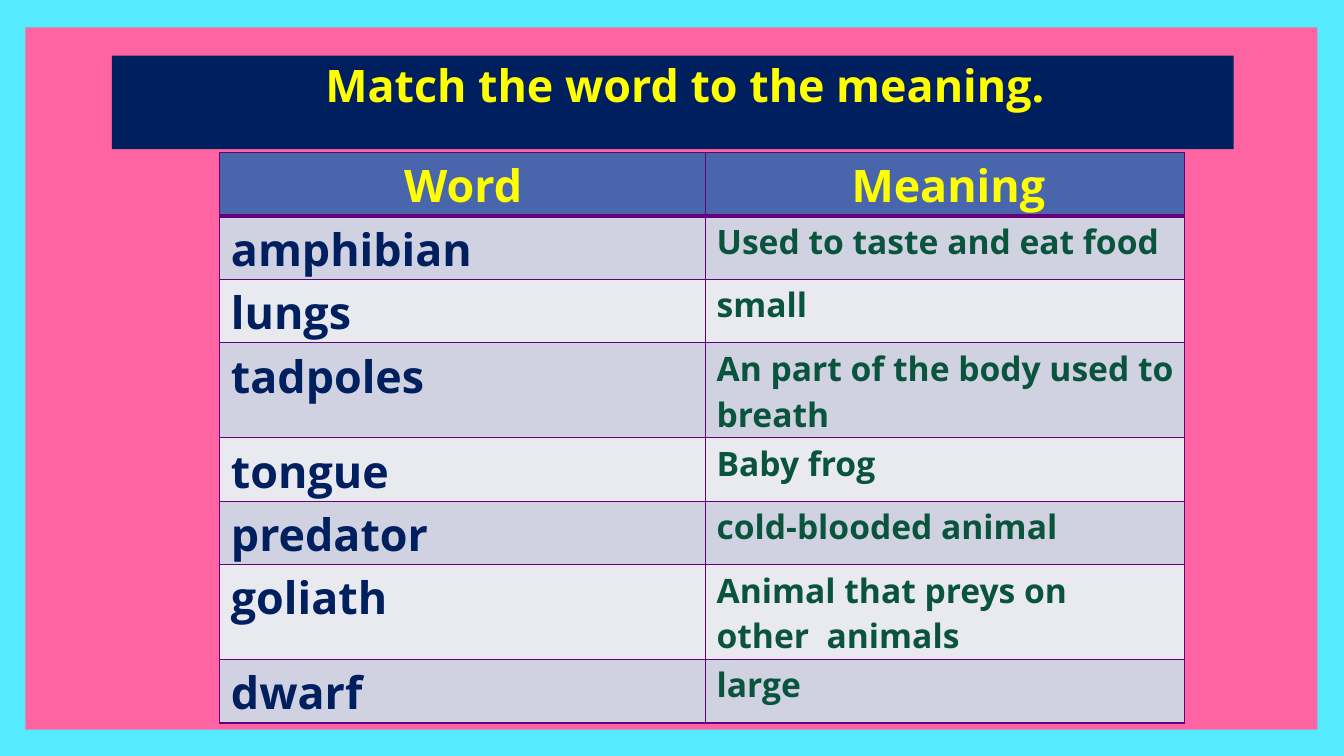
from dataclasses import dataclass

from lxml import etree
from pptx import Presentation
from pptx.dml.color import RGBColor
from pptx.enum.shapes import MSO_SHAPE
from pptx.enum.text import MSO_ANCHOR, PP_ALIGN
from pptx.oxml.ns import qn
from pptx.util import Cm, Pt

RECT = MSO_SHAPE.RECTANGLE
TOP = MSO_ANCHOR.TOP
LEFT, CENTER = PP_ALIGN.LEFT, PP_ALIGN.CENTER


@dataclass(frozen=True)
class Theme:
    font: str = "Open Sans"
    big: int = 32
    small: int = 24
    edge: str = "55EBFF"
    pink: str = "FF64A2"
    navy: str = "001F5F"
    yellow: str = "FFFF00"
    green: str = "0A543D"
    head: str = "4966AC"
    bands: tuple[str, str] = ("D0D2E2", "E9EAF0")
    line: str = "66007E"
    thin: int = 1
    thick: int = 3


@dataclass(frozen=True)
class Box:
    left: float
    top: float
    width: float
    height: float
    fill: str


@dataclass(frozen=True)
class Style:
    size: int
    color: str
    align: PP_ALIGN = LEFT
    left: float = 0.28
    right: float = 0
    top: float = 0.06


@dataclass(frozen=True)
class Pair:
    word: str
    meaning: str
    height: float = 1.6
    right: float = 0


THEME = Theme()
WIDTH, HEIGHT = 33.87, 19.05
FRAME = (
    Box(0, 0, WIDTH, HEIGHT, THEME.edge),
    Box(0.64, 0.69, 32.56, 17.7, THEME.pink),
)
TITLE = Box(2.82, 1.4, 28.27, 2.36, THEME.navy)
GRID_LEFT, GRID_TOP = 5.54, 3.84
COLS = (12.24, 12.07)
HEAD = Pair("Word", "Meaning")
PAIRS = (
    Pair("amphibian", "Used to taste and eat food"),
    Pair("lungs", "small"),
    Pair("tadpoles", "An part of the body used to\nbreath", 2.39),
    Pair("tongue", "Baby frog"),
    Pair("predator", "cold-blooded animal"),
    Pair("goliath", "Animal that preys on other  animals", 2.39, 1),
    Pair("dwarf", "large"),
)


def add_box(slide, box: Box):
    shape = slide.shapes.add_shape(
        RECT, Cm(box.left), Cm(box.top), Cm(box.width), Cm(box.height))
    shape.shadow.inherit = False
    shape.fill.solid()
    shape.fill.fore_color.rgb = RGBColor.from_string(box.fill)
    shape.line.fill.background()
    return shape


def set_text(frame, text: str, style: Style) -> None:
    frame.text = text
    for para in frame.paragraphs:
        para.alignment = style.align
        font = para.font
        font.name, font.size, font.bold = THEME.font, Pt(style.size), True
        font.color.rgb = RGBColor.from_string(style.color)
    frame.paragraphs[0].space_before = Pt(2)


def set_space(owner, style: Style) -> None:
    owner.margin_left, owner.margin_right = Cm(style.left), Cm(style.right)
    owner.margin_top, owner.margin_bottom = Cm(style.top), Cm(0)
    owner.vertical_anchor = TOP


def set_edges(cell, above: int, below: int) -> None:
    props = cell._tc.get_or_add_tcPr()
    sides = {"L": THEME.thin, "R": THEME.thin, "T": above, "B": below}
    for spot, (side, width) in enumerate(sides.items()):
        line = etree.Element(qn(f"a:ln{side}"), w=str(Pt(width)))
        fill = etree.SubElement(line, qn("a:solidFill"))
        etree.SubElement(fill, qn("a:srgbClr"), val=THEME.line)
        props.insert(spot, line)


def fill_cell(cell, text: str, style: Style, fill: str) -> None:
    set_text(cell.text_frame, text, style)
    set_space(cell, style)
    cell.fill.solid()
    cell.fill.fore_color.rgb = RGBColor.from_string(fill)


def add_grid(slide) -> None:
    rows = (HEAD, *PAIRS)
    table = slide.shapes.add_table(
        len(rows), len(COLS), Cm(GRID_LEFT), Cm(GRID_TOP),
        Cm(sum(COLS)), Cm(sum(row.height for row in rows))).table
    table.first_row = table.horz_banding = False
    for col, width in zip(table.columns, COLS):
        col.width = Cm(width)

    for num, pair in enumerate(rows):
        table.rows[num].height = Cm(pair.height)
        if num == 0:
            fill = THEME.head
            styles = (Style(THEME.big, THEME.yellow, CENTER, 0.03),
                      Style(THEME.big, THEME.yellow, left=3.68))
        else:
            fill = THEME.bands[(num - 1) % 2]
            styles = (Style(THEME.big, THEME.navy),
                      Style(THEME.small, THEME.green, right=pair.right))
        above = THEME.thick if num == 1 else THEME.thin
        below = THEME.thick if num == 0 else THEME.thin
        texts = (pair.word, pair.meaning)
        for cell, text, style in zip(table.rows[num].cells, texts, styles):
            fill_cell(cell, text, style, fill)
            set_edges(cell, above, below)


def main() -> None:
    deck = Presentation()
    deck.slide_width, deck.slide_height = Cm(WIDTH), Cm(HEIGHT)
    slide = deck.slides.add_slide(deck.slide_layouts[6])

    # Coloured frame
    for box in FRAME:
        add_box(slide, box)

    # Words and meanings
    add_grid(slide)

    # Title bar
    frame = add_box(slide, TITLE).text_frame
    style = Style(THEME.big, THEME.yellow, left=5.38)
    frame.word_wrap = True
    set_text(frame, "Match the word to the meaning.", style)
    set_space(frame, style)

    deck.save("out.pptx")


if __name__ == "__main__":
    main()
